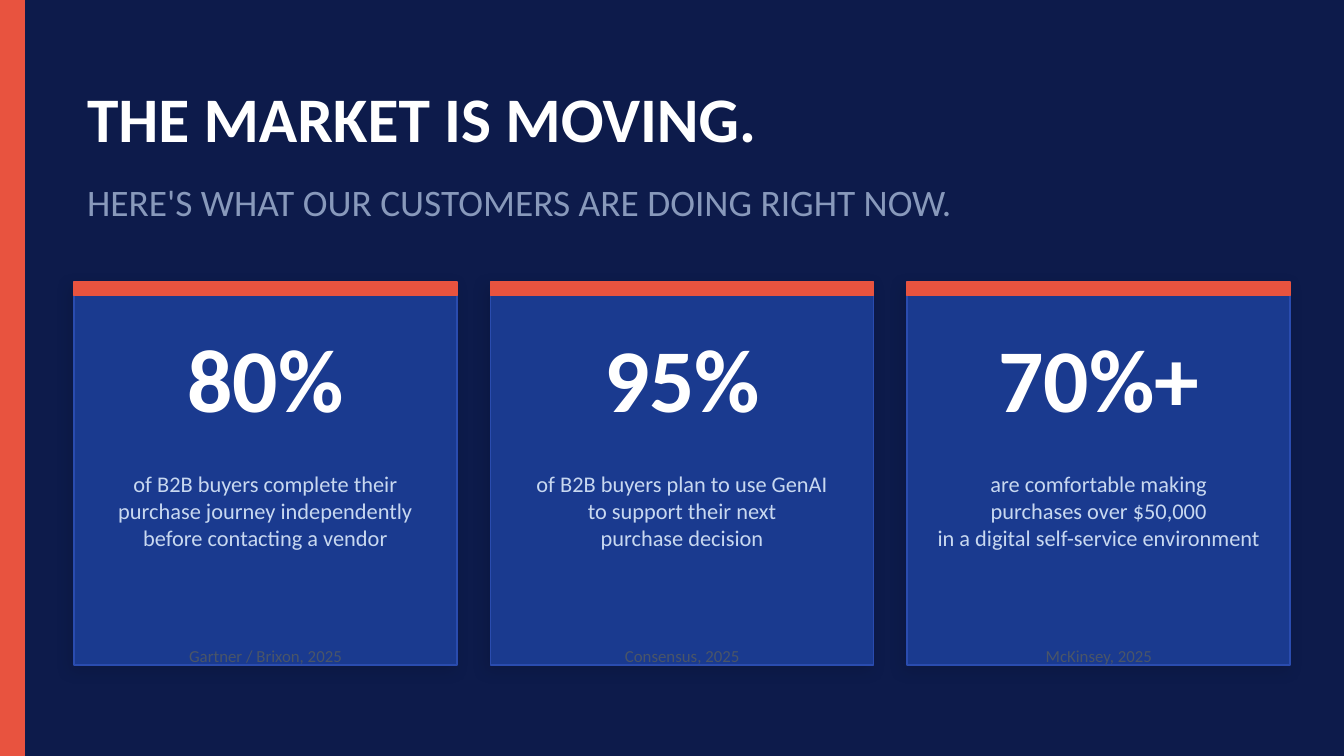
import lxml.etree
import pptx
import pptx.dml.color
import pptx.enum.shapes
import pptx.enum.text
import pptx.oxml
import pptx.oxml.ns
import pptx.util

RGBColor = pptx.dml.color.RGBColor
NAVY = RGBColor(0x0D, 0x1B, 0x4B)
CORAL = RGBColor(0xE8, 0x53, 0x3F)
BLUE = RGBColor(0x1A, 0x3A, 0x8F)
BLUE_EDGE = RGBColor(0x2A, 0x4C, 0xAF)
WHITE = RGBColor(0xFF, 0xFF, 0xFF)
MUTED = RGBColor(0x88, 0x99, 0xBB)
PALE = RGBColor(0xC8, 0xD8, 0xF0)
SLATE = RGBColor(0x4A, 0x55, 0x68)

CELL = pptx.util.Inches(0.1)
COLUMNS = 100
ROWS = COLUMNS * 9 / 16
MARGIN = 5.5
CARD_SIZE = 28.5
CARD_PITCH = 31
CARD_TOP = 21

STATISTICS = [
    ("80%",
     "of B2B buyers complete their\npurchase journey independently\nbefore contacting a vendor",
     "Gartner / Brixon, 2025"),
    ("95%",
     "of B2B buyers plan to use GenAI\nto support their next\npurchase decision",
     "Consensus, 2025"),
    ("70%+",
     "are comfortable making\npurchases over $50,000\nin a digital self-service environment",
     "McKinsey, 2025"),
]


class SlideBuilder:
    """Draws styled elements on one slide, placed in grid columns and rows."""

    font_name = "Calibri"

    def __init__(self, presentation):
        presentation.slide_width = self.length(COLUMNS)
        presentation.slide_height = self.length(ROWS)
        self.slide = presentation.slides.add_slide(presentation.slide_layouts[6])
        self.slide.background.fill.solid()
        self.slide.background.fill.fore_color.rgb = NAVY

    def length(self, cells):
        return pptx.util.Emu(round(cells * CELL))

    def box(self, *cells):
        return [self.length(value) for value in cells]

    def rectangle(self, left, top, width, height, fill, line):
        shape = self.slide.shapes.add_shape(
            pptx.enum.shapes.MSO_SHAPE.RECTANGLE, *self.box(left, top, width, height))
        shape.shadow.inherit = False
        shape.fill.solid()
        shape.fill.fore_color.rgb = fill
        shape.line.color.rgb = line
        shape.line.width = pptx.util.Pt(1)
        return shape

    def soften(self, shape):
        effects = shape._element.spPr.find(pptx.oxml.ns.qn("a:effectLst"))
        effects.append(pptx.oxml.parse_xml(
            f'<a:outerShdw {pptx.oxml.ns.nsdecls("a")} blurRad="{pptx.util.Pt(8)}" '
            f'dist="{pptx.util.Pt(3)}" dir="{135 * 60000}" algn="bl" rotWithShape="0">'
            '<a:srgbClr val="000000"><a:alpha val="12000"/></a:srgbClr></a:outerShdw>'))

    def text(self, left, top, width, height, words, size, color, bold=False, centered=False):
        alignment = pptx.enum.text.PP_ALIGN
        text_frame = self.slide.shapes.add_textbox(
            *self.box(left, top, width, height)).text_frame
        text_frame.word_wrap = True
        text_frame.vertical_anchor = pptx.enum.text.MSO_ANCHOR.MIDDLE
        text_frame.text = words
        for paragraph in text_frame.paragraphs:
            paragraph.alignment = alignment.CENTER if centered else alignment.LEFT
            for run in paragraph.runs:
                run.font.name = self.font_name
                run.font.size = pptx.util.Pt(size)
                run.font.bold = bold
                run.font.color.rgb = color

    def card(self, left, figure, statement, source):
        self.soften(self.rectangle(left, CARD_TOP, CARD_SIZE, CARD_SIZE, BLUE, BLUE_EDGE))
        self.rectangle(left, CARD_TOP, CARD_SIZE, 1, CORAL, CORAL)
        inner_left, inner_width = left + 1, CARD_SIZE - 2
        self.text(inner_left, 22.5, inner_width, 11, figure, 48, WHITE, bold=True, centered=True)
        self.text(inner_left, 33, inner_width, 10, statement, 12, PALE, centered=True)
        self.text(inner_left, 47.8, inner_width, 2, source, 9, SLATE, centered=True)


def main():
    presentation = pptx.Presentation()
    builder = SlideBuilder(presentation)
    builder.rectangle(0, 0, 1.8, ROWS, CORAL, CORAL)
    builder.text(MARGIN, 5, 85, 7.5, "THE MARKET IS MOVING.", 34, WHITE, bold=True)
    builder.text(MARGIN, 12, 85, 6,
                 "HERE'S WHAT OUR CUSTOMERS ARE DOING RIGHT NOW.", 20, MUTED)
    for index, statistic in enumerate(STATISTICS):
        builder.card(MARGIN + index * CARD_PITCH, *statistic)
    presentation.save("out.pptx")


if __name__ == "__main__":
    main()
